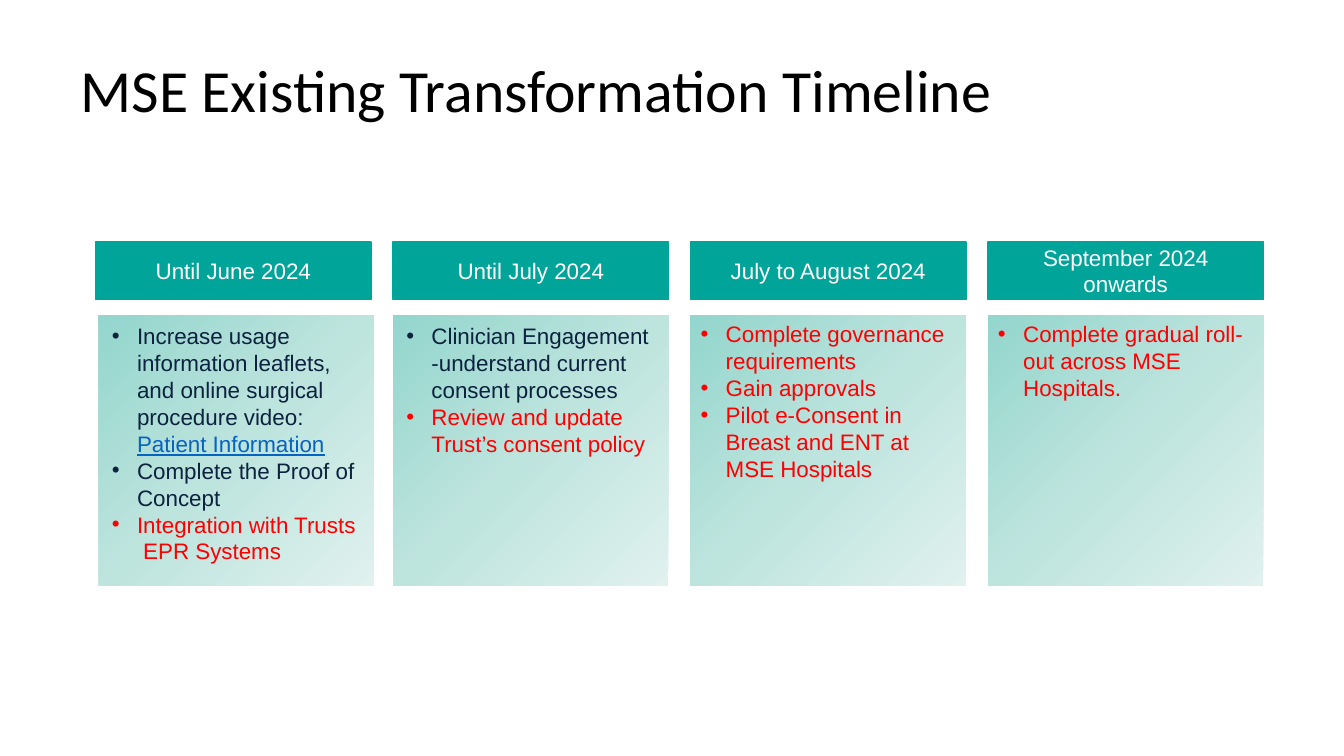
from dataclasses import dataclass

from lxml import etree
from pptx import Presentation
from pptx.dml.color import RGBColor
from pptx.enum.shapes import MSO_SHAPE
from pptx.enum.text import MSO_ANCHOR, PP_ALIGN
from pptx.oxml import parse_xml
from pptx.oxml.ns import qn
from pptx.shapes.autoshape import Shape
from pptx.slide import Slide
from pptx.text.text import TextFrame
from pptx.util import Inches, Pt

RECTANGLE = MSO_SHAPE.RECTANGLE
TOP, MIDDLE = MSO_ANCHOR.TOP, MSO_ANCHOR.MIDDLE
LEFT, CENTER = PP_ALIGN.LEFT, PP_ALIGN.CENTER

BLACK = RGBColor(0x00, 0x00, 0x00)
WHITE = RGBColor(0xFF, 0xFF, 0xFF)
TEAL = RGBColor(0x00, 0xA4, 0x99)
NAVY = RGBColor(0x0C, 0x22, 0x3F)
RED = RGBColor(0xFF, 0x00, 0x00)
LINK_BLUE = RGBColor(0x05, 0x63, 0xC1)
PANEL_GRADIENT = (
    (0, RGBColor(0x93, 0xD6, 0xCD)),
    (50, RGBColor(0xBE, 0xE4, 0xDE)),
    (100, RGBColor(0xE0, 0xF1, 0xEE)),
)

FIRST_LEFT, COLUMN_PITCH, COLUMN_WIDTH = 0.95, 2.95, 2.73
HEADING_TOP, HEADING_HEIGHT = 2.4, 0.57
PANEL_TOP, PANEL_HEIGHT = 3.13, 2.68
BULLET_INDENT = 0.25
NARROW_INSETS = (0.1, 0.05)
WIDE_INSETS = (0.13, 0.07)


@dataclass(frozen=True)
class Span:
    text: str
    color: RGBColor
    underline: bool = False


@dataclass(frozen=True)
class Phase:
    heading: str
    bullets: tuple[tuple[Span, ...], ...]
    insets: tuple[float, float] = NARROW_INSETS
    panel_shift: float = 0


PHASES = (
    Phase(
        "Until June 2024",
        (
            (
                Span("Increase usage information leaflets, and online surgical procedure video: ", NAVY),
                Span("Patient Information", LINK_BLUE, underline=True),
            ),
            (Span("Complete the Proof of Concept", NAVY),),
            (Span("Integration with Trusts  EPR Systems", RED),),
        ),
        insets=WIDE_INSETS,
        panel_shift=0.03,
    ),
    Phase(
        "Until July 2024",
        (
            (Span("Clinician Engagement -understand current consent processes", NAVY),),
            (Span("Review and update Trust’s consent policy", RED),),
        ),
        insets=WIDE_INSETS,
    ),
    Phase(
        "July to August 2024",
        (
            (Span("Complete governance requirements", RED),),
            (Span("Gain approvals", RED),),
            (Span("Pilot e-Consent in Breast and ENT at MSE Hospitals", RED),),
        ),
    ),
    Phase(
        "September 2024 onwards",
        ((Span("Complete gradual roll-out across MSE Hospitals.", RED),),),
    ),
)


def write_text(
    frame: TextFrame,
    paragraphs: tuple[tuple[Span, ...], ...],
    *,
    size: float = 16,
    font: str = "Arial",
    align: PP_ALIGN = LEFT,
    anchor: MSO_ANCHOR = TOP,
    insets: tuple[float, float] = NARROW_INSETS,
    line_spacing: float = 1.0,
    bulleted: bool = False,
) -> None:
    frame.word_wrap = True
    frame.vertical_anchor = anchor
    frame.margin_left = frame.margin_right = Inches(insets[0])
    frame.margin_top = frame.margin_bottom = Inches(insets[1])
    for index, spans in enumerate(paragraphs):
        paragraph = frame.add_paragraph() if index else frame.paragraphs[0]
        paragraph.alignment = align
        paragraph.line_spacing = line_spacing
        if bulleted:
            properties = paragraph._p.get_or_add_pPr()
            properties.set("marL", str(Inches(BULLET_INDENT)))
            properties.set("indent", str(-Inches(BULLET_INDENT)))
            etree.SubElement(properties, qn("a:buFont")).set("typeface", "Arial")
            etree.SubElement(properties, qn("a:buChar")).set("char", "•")
        for span in spans:
            run = paragraph.add_run()
            run.text = span.text
            run.font.size = Pt(size)
            run.font.name = font
            run.font.color.rgb = span.color
            if span.underline:
                run.font.underline = True


def add_rectangle(slide: Slide, left: float, top: float, height: float) -> Shape:
    shape = slide.shapes.add_shape(
        RECTANGLE, Inches(left), Inches(top), Inches(COLUMN_WIDTH), Inches(height)
    )
    shape.shadow.inherit = False
    return shape


def fill_from_corner(shape: Shape) -> None:
    """Fill the shape with the panel gradient, starting at its top left corner."""
    stops = "".join(
        f'<a:gs pos="{percent * 1000}"><a:srgbClr val="{color}"/></a:gs>'
        for percent, color in PANEL_GRADIENT
    )
    gradient = parse_xml(
        '<a:gradFill xmlns:a="http://schemas.openxmlformats.org/drawingml/2006/main" rotWithShape="1">'
        f"<a:gsLst>{stops}</a:gsLst>"
        '<a:path path="circle"><a:fillToRect r="100000" b="100000"/></a:path></a:gradFill>'
    )
    shape._element.spPr.find(qn("a:prstGeom")).addnext(gradient)


def add_title(slide: Slide, title: str) -> None:
    box = slide.shapes.add_textbox(Inches(0.67), Inches(0.3), Inches(12), Inches(1.25))
    write_text(
        box.text_frame, ((Span(title, BLACK),),), size=42.7, font="Calibri",
        anchor=MIDDLE, insets=WIDE_INSETS, line_spacing=0.9,
    )


def add_phase(slide: Slide, phase: Phase, left: float) -> None:
    heading = add_rectangle(slide, left, HEADING_TOP, HEADING_HEIGHT)
    heading.fill.solid()
    heading.fill.fore_color.rgb = TEAL
    heading.line.color.rgb = TEAL
    heading.line.width = Pt(1)
    write_text(
        heading.text_frame, ((Span(phase.heading, WHITE),),), align=CENTER, anchor=MIDDLE
    )

    panel = add_rectangle(slide, left + phase.panel_shift, PANEL_TOP, PANEL_HEIGHT)
    fill_from_corner(panel)
    panel.line.fill.background()
    write_text(panel.text_frame, phase.bullets, insets=phase.insets, bulleted=True)


def main() -> None:
    presentation = Presentation()
    presentation.slide_width = Inches(13.33)
    presentation.slide_height = Inches(7.5)
    slide = presentation.slides.add_slide(presentation.slide_layouts[6])
    add_title(slide, "MSE Existing Transformation Timeline")
    for index, phase in enumerate(PHASES):
        add_phase(slide, phase, FIRST_LEFT + index * COLUMN_PITCH)
    presentation.save("out.pptx")


if __name__ == "__main__":
    main()
